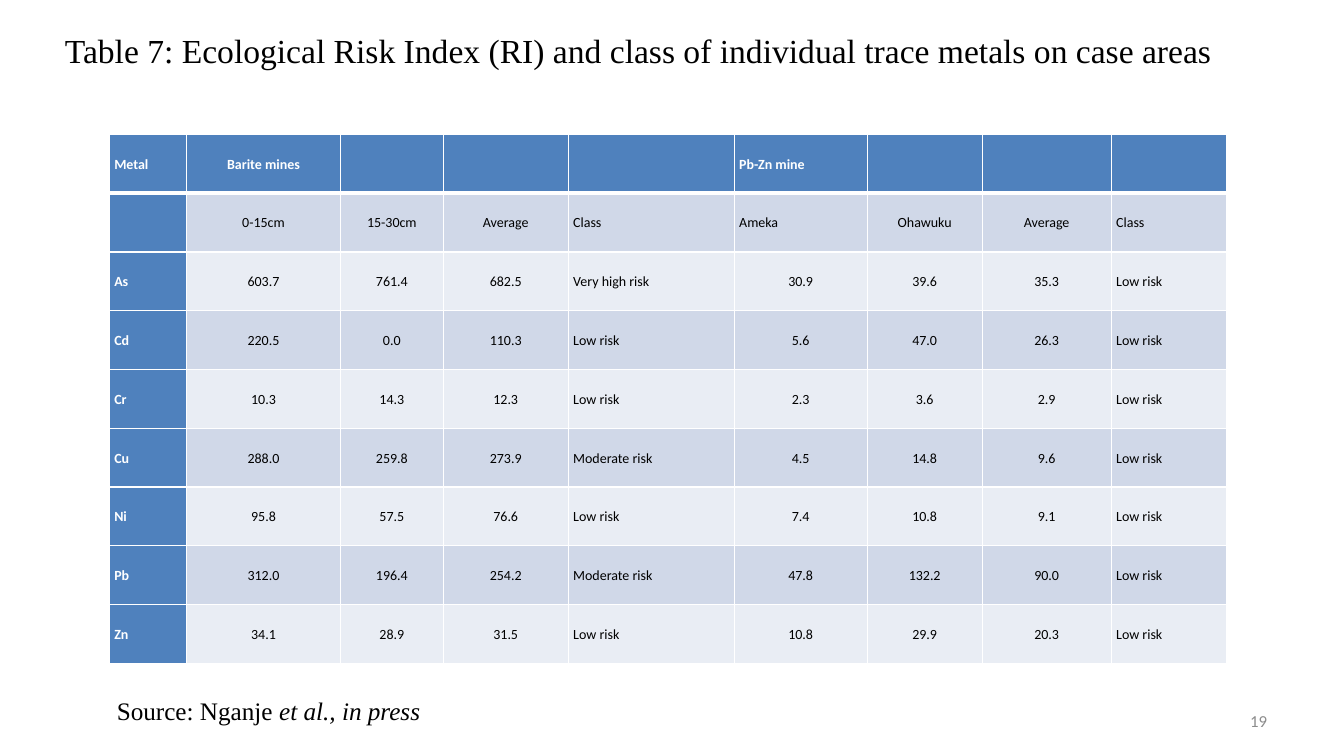
from dataclasses import dataclass

from lxml import etree
from pptx import Presentation
from pptx import util as u
from pptx.dml import color
from pptx.enum import text
from pptx.oxml import ns
from pptx.slide import Slide
from pptx.table import _Cell

BLACK = color.RGBColor(0x00, 0x00, 0x00)
WHITE = color.RGBColor(0xFF, 0xFF, 0xFF)
GREY = color.RGBColor(0x8C, 0x8C, 0x8C)
BLUE = color.RGBColor(0x4F, 0x81, 0xBD)
BAND_DARK = color.RGBColor(0xD0, 0xD8, 0xE8)
BAND_LIGHT = color.RGBColor(0xE9, 0xED, 0xF4)

LEFT = text.PP_ALIGN.LEFT
CENTER = text.PP_ALIGN.CENTER
RIGHT = text.PP_ALIGN.RIGHT
TOP = text.MSO_ANCHOR.TOP
MIDDLE = text.MSO_ANCHOR.MIDDLE

SERIF = "Times New Roman"
SANS = "Calibri"


@dataclass
class Label:
    wording: tuple[str, ...]
    left: float
    top: float
    width: float
    height: float
    size: float
    font: str
    color: color.RGBColor
    align: text.PP_ALIGN
    anchor: text.MSO_ANCHOR


@dataclass
class Column:
    width: float
    align: text.PP_ALIGN


LABELS = [
    Label(("Table 7: Ecological Risk Index (RI) and class of individual trace metals on case areas",),
          0, 0, 912, 72, 24, SERIF, BLACK, CENTER, MIDDLE),
    Label(("19",), 688.3, 500.4, 223.9, 28.8, 12, SANS, GREY, RIGHT, MIDDLE),
    Label(("Source: Nganje ", "et al., in press"),
          76.3, 493.2, 270, 28.8, 18, SERIF, BLACK, LEFT, TOP),
]

COLUMNS = [
    Column(55.2, LEFT), Column(110, CENTER), Column(73.4, CENTER),
    Column(89.3, CENTER), Column(118.6, LEFT), Column(95, CENTER),
    Column(82.1, CENTER), Column(92.2, CENTER), Column(82.1, LEFT),
]

ROWS = [
    ("Metal", "Barite mines", "", "", "", "Pb-Zn mine", "", "", ""),
    ("", "0-15cm", "15-30cm", "Average", "Class", "Ameka", "Ohawuku", "Average", "Class"),
    ("As", "603.7", "761.4", "682.5", "Very high risk", "30.9", "39.6", "35.3", "Low risk"),
    ("Cd", "220.5", "0.0", "110.3", "Low risk", "5.6", "47.0", "26.3", "Low risk"),
    ("Cr", "10.3", "14.3", "12.3", "Low risk", "2.3", "3.6", "2.9", "Low risk"),
    ("Cu", "288.0", "259.8", "273.9", "Moderate risk", "4.5", "14.8", "9.6", "Low risk"),
    ("Ni", "95.8", "57.5", "76.6", "Low risk", "7.4", "10.8", "9.1", "Low risk"),
    ("Pb", "312.0", "196.4", "254.2", "Moderate risk", "47.8", "132.2", "90.0", "Low risk"),
    ("Zn", "34.1", "28.9", "31.5", "Low risk", "10.8", "29.9", "20.3", "Low risk"),
]
TABLE_LEFT, TABLE_TOP, ROW_HEIGHT = 78, 96, 42
MINE_COLUMN = 5
HEADER_ROWS = 2


def add_label(s: Slide, label: Label) -> None:
    sp = s.shapes.add_textbox(u.Pt(label.left), u.Pt(label.top),
                              u.Pt(label.width), u.Pt(label.height))
    tf = sp.text_frame
    tf.word_wrap = True
    tf.vertical_anchor = label.anchor
    p = tf.paragraphs[0]
    p.alignment = label.align
    for i, words in enumerate(label.wording):
        r = p.add_run()
        r.text = words
        r.font.size = u.Pt(label.size)
        r.font.name = label.font
        r.font.color.rgb = label.color
        r.font.italic = i > 0


def set_borders(cell: _Cell, row: int) -> None:
    props = cell._tc.get_or_add_tcPr()
    widths = {"lnL": 1, "lnR": 1, "lnT": 3 if row == 1 else 1, "lnB": 3 if row == 0 else 1}
    for tag, width in widths.items():
        line = etree.SubElement(props, ns.qn(f"a:{tag}"), w=str(u.Pt(width)))
        fill = etree.SubElement(line, ns.qn("a:solidFill"))
        etree.SubElement(fill, ns.qn("a:srgbClr"), val=str(WHITE))


def style_cell(cell: _Cell, value: str, row: int, col: int) -> None:
    heading = row == 0 or col == 0
    set_borders(cell, row)
    cell.fill.solid()
    cell.fill.fore_color.rgb = BLUE if heading else BAND_DARK if row % 2 else BAND_LIGHT
    cell.vertical_anchor = MIDDLE
    cell.margin_left = cell.margin_right = u.Pt(3.6)
    cell.margin_top = cell.margin_bottom = u.Pt(0)
    cell.text_frame.text = value
    p = cell.text_frame.paragraphs[0]
    mine_heading = col == MINE_COLUMN and row < HEADER_ROWS
    p.alignment = LEFT if mine_heading else COLUMNS[col].align
    p.line_spacing = 1.07
    for r in p.runs:
        r.font.size = u.Pt(10)
        r.font.name = SANS
        r.font.bold = heading
        r.font.color.rgb = WHITE if heading else BLACK


def add_risk_table(s: Slide) -> None:
    width = sum(column.width for column in COLUMNS)
    table = s.shapes.add_table(len(ROWS), len(COLUMNS), u.Pt(TABLE_LEFT), u.Pt(TABLE_TOP),
                               u.Pt(width), u.Pt(ROW_HEIGHT * len(ROWS))).table
    table.first_col = True
    for col, column in enumerate(COLUMNS):
        table.columns[col].width = u.Pt(column.width)
    for row, values in enumerate(ROWS):
        table.rows[row].height = u.Pt(ROW_HEIGHT)
        for col, value in enumerate(values):
            style_cell(table.cell(row, col), value, row, col)


def main() -> None:
    prs = Presentation()
    prs.slide_width = u.Pt(960)
    prs.slide_height = u.Pt(540)
    s = prs.slides.add_slide(prs.slide_layouts[6])
    add_risk_table(s)
    for label in LABELS:
        add_label(s, label)
    prs.save("out.pptx")


if __name__ == "__main__":
    main()
